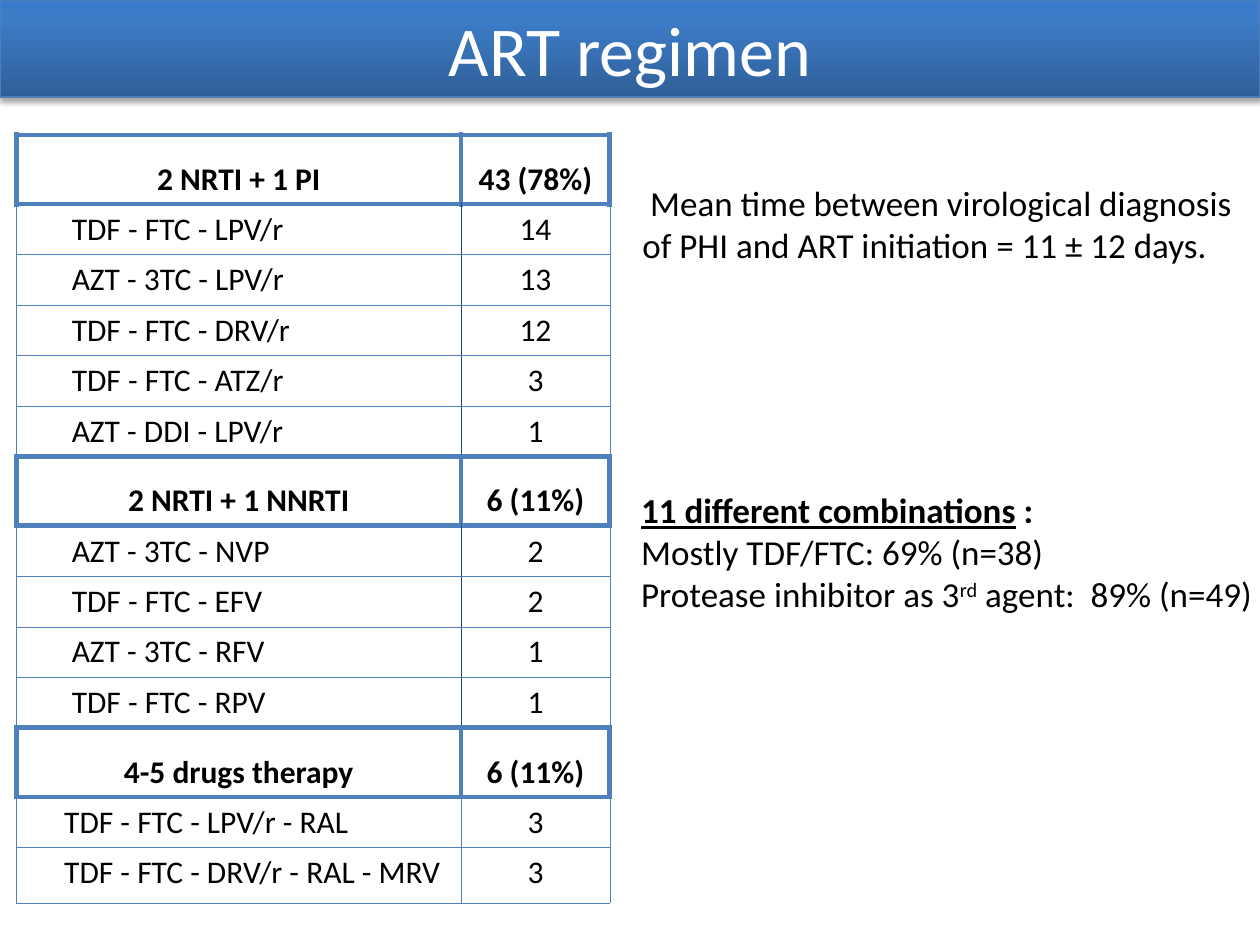
from copy import deepcopy
from lxml.etree import SubElement
from pptx import Presentation
from pptx.dml.color import RGBColor
from pptx.enum.shapes import MSO_SHAPE
from pptx.enum.text import MSO_ANCHOR, PP_ALIGN
from pptx.oxml.ns import qn
from pptx.util import Inches, Pt

COLORS = {
    "text": "000000",
    "title": "FFFFFF",
    "banner_line": "4B7EBC",
    "border": "4F81BD",
    "divider": "1F497D",
    "shadow": "000000",
}
BANNER_STOPS = [(0, "2F5F99"), (0.8, "3D7CC7"), (1, "3A7CCB")]

REGIMENS = [
    ("2 NRTI + 1 PI", "43 (78%)", 0.44, "divider", [
        ("TDF - FTC - LPV/r", "14"),
        ("AZT - 3TC - LPV/r", "13"),
        ("TDF - FTC - DRV/r", "12"),
        ("TDF - FTC - ATZ/r", "3"),
        ("AZT - DDI - LPV/r", "1"),
    ]),
    ("2 NRTI + 1 NNRTI", "6 (11%)", 0.44, "divider", [
        ("AZT - 3TC - NVP", "2"),
        ("TDF - FTC - EFV", "2"),
        ("AZT - 3TC - RFV", "1"),
        ("TDF - FTC - RPV", "1"),
    ]),
    ("4-5 drugs therapy", "6 (11%)", 0.38, "border", [
        ("TDF - FTC - LPV/r - RAL", "3"),
        ("TDF - FTC - DRV/r - RAL - MRV", "3"),
    ]),
]


class SlideBuilder:
    font = "Calibri"
    thick = 3
    thin = 0.25

    def __init__(self, slide):
        self.slide = slide

    def style(self, run, size, color="text", bold=False):
        run.font.name = self.font
        run.font.size = Pt(size)
        run.font.bold = bold
        run.font.color.rgb = RGBColor.from_string(COLORS[color])

    def banner(self, text, width, height):
        shape = self.slide.shapes.add_shape(
            MSO_SHAPE.RECTANGLE, 0, 0, Inches(width), Inches(height))
        shape.fill.gradient()
        shape.fill.gradient_angle = 90
        stop_list = next(shape.element.iter(qn("a:gsLst")))
        stop_list.append(deepcopy(stop_list[0]))
        for stop, (position, color) in zip(shape.fill.gradient_stops, BANNER_STOPS):
            stop.position = position
            stop.color.rgb = RGBColor.from_string(color)
        shape.line.color.rgb = RGBColor.from_string(COLORS["banner_line"])
        shape.line.width = Pt(0.75)
        self.drop_shadow(shape)
        frame = shape.text_frame
        frame.text = text
        frame.vertical_anchor = MSO_ANCHOR.MIDDLE
        paragraph = frame.paragraphs[0]
        paragraph.alignment = PP_ALIGN.CENTER
        self.style(paragraph.runs[0], 40, "title")

    def drop_shadow(self, shape):
        shape.shadow.inherit = False
        effects = next(shape.element.iter(qn("a:effectLst")))
        shadow = SubElement(effects, qn("a:outerShdw"), blurRad=str(Pt(3.1)),
                            dist=str(Pt(1.8)), dir="5400000", rotWithShape="0")
        color = SubElement(shadow, qn("a:srgbClr"), val=COLORS["shadow"])
        SubElement(color, qn("a:alpha"), val="35000")

    def text_box(self, left, top, width, height, lines):
        box = self.slide.shapes.add_textbox(
            Inches(left), Inches(top), Inches(width), Inches(height))
        frame = box.text_frame
        frame.word_wrap = True
        frame.text = "\n".join(lines)
        for paragraph in frame.paragraphs:
            self.style(paragraph.runs[0], 20)
        return frame

    def add_run(self, paragraph, text, bold=False):
        run = paragraph.add_run()
        run.text = text
        self.style(run, 20, bold=bold)
        return run

    def border(self, cell, side, color, width):
        line = SubElement(cell._tc.get_or_add_tcPr(), qn(f"a:ln{side}"), w=str(Pt(width)))
        fill = SubElement(line, qn("a:solidFill"))
        SubElement(fill, qn("a:srgbClr"), val=COLORS[color])

    def cell(self, cell, text, header, centered, indent, borders):
        for side, (color, width) in borders.items():
            self.border(cell, side, color, width)
        cell.fill.background()
        cell.text_frame.text = text
        paragraph = cell.text_frame.paragraphs[0]
        if header:
            paragraph.line_spacing = 1.5
        if centered:
            paragraph.alignment = PP_ALIGN.CENTER
        else:
            cell.margin_left = Inches(indent)
        self.style(paragraph.runs[0], 18, bold=header)

    def regimen_table(self, left, top, column_widths, groups):
        rows = []
        for name, total, indent, divider, members in groups:
            rows.append((name, total, True, indent, "border"))
            rows += [(*member, False, indent, divider) for member in members]
        headers = [row[2] for row in rows]
        heights = [0.55 if header else 0.4 for header in headers]
        heights[-1] = 0.44
        table = self.slide.shapes.add_table(
            len(rows), len(column_widths), Inches(left), Inches(top),
            Inches(sum(column_widths)), Inches(sum(heights))).table
        table.first_row = False
        table.horz_banding = False
        for column, width in zip(table.columns, column_widths):
            column.width = Inches(width)
        for index, (name, count, header, indent, divider) in enumerate(rows):
            table.rows[index].height = Inches(heights[index])
            side = self.thick if header else self.thin
            above = self.thick if any(headers[max(index - 1, 0):index + 1]) else self.thin
            below = self.thick if any(headers[index:index + 2]) else self.thin
            for column, text in enumerate((name, count)):
                borders = {
                    "L": (divider if column else "border", side),
                    "R": ("border" if column else divider, side),
                    "T": ("border", above),
                    "B": ("border", below),
                }
                self.cell(table.cell(index, column), text, header,
                          header or column == 1, indent, borders)


def main():
    presentation = Presentation()
    presentation.slide_width = Inches(10)
    presentation.slide_height = Inches(7.5)
    builder = SlideBuilder(presentation.slides.add_slide(presentation.slide_layouts[6]))

    combinations = builder.text_box(4.99, 3.83, 5.28, 1.11, [
        "11 different combinations",
        "Mostly TDF/FTC: 69% (n=38)",
        "Protease inhibitor as 3",
    ])
    heading, _, protease = combinations.paragraphs
    heading.runs[0].font.bold = True
    heading.runs[0].font.underline = True
    builder.add_run(heading, " :", bold=True)
    ordinal = builder.add_run(protease, "rd")
    ordinal.font._element.set("baseline", "30000")
    builder.add_run(protease, " agent:  89% (n=49)")

    builder.banner("ART regimen", 10, 0.77)
    builder.regimen_table(0.13, 1.07, [3.53, 1.18], REGIMENS)
    builder.text_box(5, 1.39, 5.34, 0.77, [
        " Mean time between virological diagnosis",
        "of PHI and ART initiation = 11 ± 12 days.",
    ])
    presentation.save("out.pptx")


if __name__ == "__main__":
    main()
